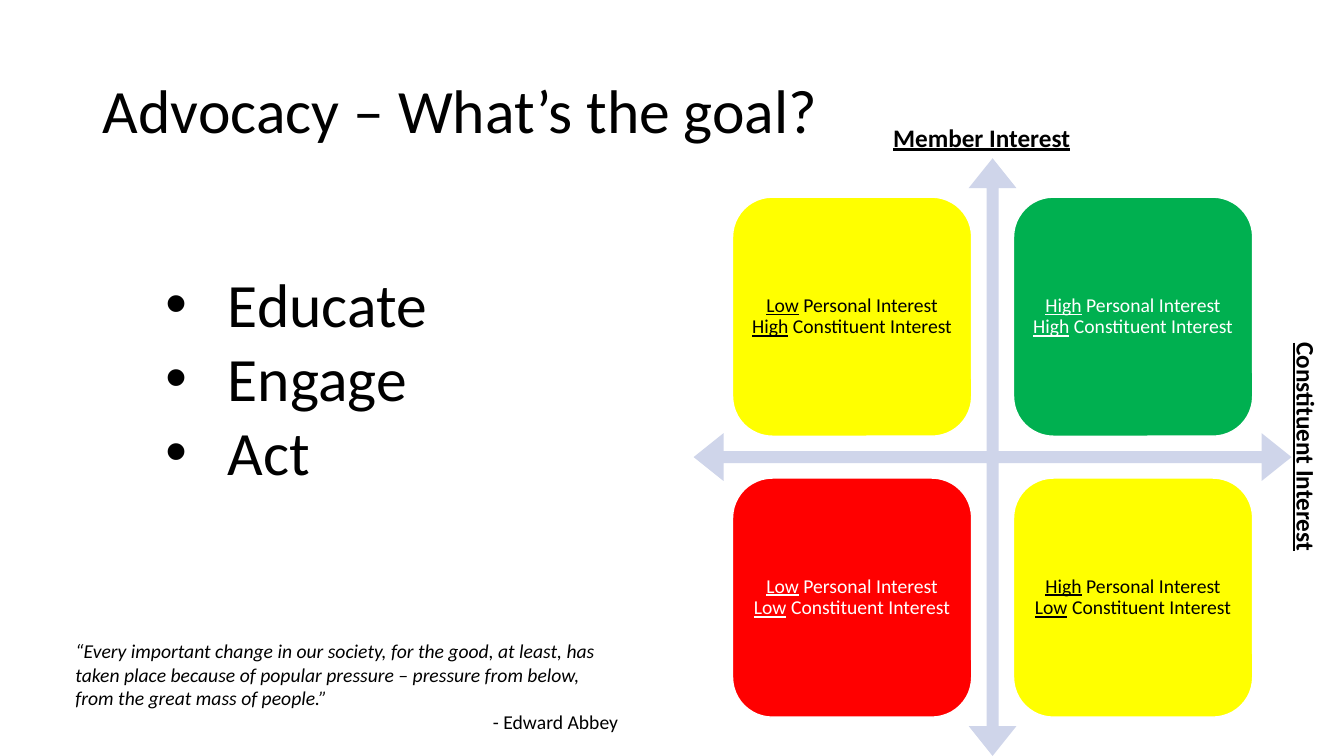
from pptx import Presentation, util as u
from pptx.dml.color import RGBColor
from pptx.enum import shapes, text

COLORS = {"black": "000000", "white": "FFFFFF", "arrow": "CFD5EA",
          "yellow": "FFFF00", "green": "00B050", "red": "FF0000"}
FONT = "Calibri"
TILES = [[("Low", "High", "yellow", "black"), ("High", "High", "green", "white")],
         [("Low", "Low", "red", "white"), ("High", "Low", "yellow", "black")]]
GOALS = ["Educate", "Engage", "Act"]
QUOTE = ("“Every important change in our society, for the good, at least, has taken place "
         "because of popular pressure – pressure from below, from the great mass of people.”")


def rgb(name):
    """Return the named palette colour."""
    return RGBColor.from_string(COLORS[name])


def place(part, box):
    """Move a part to a box given in inches."""
    part.left, part.top, part.width, part.height = map(u.Inches, box)


def add_run(paragraph, wording, size, color="black", bold=False, italic=False, underline=False):
    """Append one formatted run."""
    run = paragraph.add_run()
    run.text = wording
    font = run.font
    font.name, font.size = FONT, u.Pt(size)
    font.bold, font.italic, font.underline = bold, italic, underline
    font.color.rgb = rgb(color)


def add_shape(slide, preset, box, fill):
    """Add a flat preset shape without an outline."""
    shape = slide.shapes.add_shape(preset, *map(u.Inches, box))
    shape.shadow.inherit = False
    shape.fill.solid()
    shape.fill.fore_color.rgb = rgb(fill)
    shape.line.fill.background()
    return shape


def add_textbox(slide, box):
    """Add a wrapping text box and return it."""
    textbox = slide.shapes.add_textbox(*map(u.Inches, box))
    textbox.text_frame.word_wrap = True
    return textbox


def add_title(slide, box):
    """Fill the title placeholder."""
    title = slide.shapes.title
    place(title, box)
    frame = title.text_frame
    frame.auto_size = text.MSO_AUTO_SIZE.NONE
    frame.vertical_anchor = text.MSO_ANCHOR.MIDDLE
    heading = frame.paragraphs[0]
    heading.alignment = text.PP_ALIGN.LEFT
    heading.line_spacing = 0.9
    add_run(heading, "Advocacy – What’s the goal?", 44)


def add_goals(slide, box):
    """Fill the body placeholder with the bulleted goals."""
    body = slide.placeholders[1]
    place(body, box)
    frame = body.text_frame
    frame.auto_size = text.MSO_AUTO_SIZE.NONE
    for index, wording in enumerate(GOALS):
        goal = frame.add_paragraph() if index else frame.paragraphs[0]
        goal.space_before = u.Pt(0)
        properties = goal._p.get_or_add_pPr()
        properties.set("marL", str(u.Inches(0.62)))
        properties.set("indent", str(-u.Inches(0.62)))
        add_run(goal, wording, 44)


def add_tile(slide, box, personal, constituent, fill, color):
    """Add one quadrant with its two interest levels."""
    tile = add_shape(slide, shapes.MSO_SHAPE.ROUNDED_RECTANGLE, box, fill)
    tile.line.color.rgb = rgb("white")
    tile.line.width = u.Pt(1)
    frame = tile.text_frame
    frame.word_wrap = True
    frame.vertical_anchor = text.MSO_ANCHOR.MIDDLE
    frame.margin_left = frame.margin_right = u.Inches(0.06)
    frame.margin_top = frame.margin_bottom = u.Inches(0.06)
    levels = frame.paragraphs[0]
    levels.alignment = text.PP_ALIGN.CENTER
    levels.line_spacing = 0.9
    add_run(levels, personal, 14, color, underline=True)
    add_run(levels, " Personal Interest", 14, color)
    levels.add_line_break()
    add_run(levels, constituent, 14, color, underline=True)
    add_run(levels, " Constituent Interest", 14, color)


def add_axis_label(slide, box, wording, rotation=0):
    """Add one underlined axis label."""
    label = add_textbox(slide, box)
    label.rotation = rotation
    add_run(label.text_frame.paragraphs[0], wording, 18, bold=True, underline=True)


def add_matrix(slide, left, top, side):
    """Add the crossed arrows, four tiles and axis labels in a square."""
    arrows = add_shape(slide, shapes.MSO_SHAPE.QUAD_ARROW, (left, top, side, side), "arrow")
    for index, share in enumerate((0.02, 0.04, 0.05)):
        arrows.adjustments[index] = share
    tile, margin, pitch = 0.4 * side, 0.065 * side, 0.47 * side
    for row, tiles in enumerate(TILES):
        for column, content in enumerate(tiles):
            box = (left + margin + column * pitch, top + margin + row * pitch, tile, tile)
            add_tile(slide, box, *content)
    add_axis_label(slide, (left + 4.19, top + 3.42, 3.78, 0.4), "Constituent Interest", 90)
    add_axis_label(slide, (left + 1.88, top - 0.41, 3.78, 0.4), "Member Interest")


def add_quote(slide, box):
    """Add the quotation and its author."""
    frame = add_textbox(slide, box).text_frame
    add_run(frame.paragraphs[0], QUOTE, 14, italic=True)
    author = frame.add_paragraph()
    author.alignment = text.PP_ALIGN.RIGHT
    add_run(author, "- Edward Abbey", 14)


def main():
    """Build and save the slide."""
    deck = Presentation()
    deck.slide_width, deck.slide_height = u.Inches(13.33), u.Inches(7.5)
    slide = deck.slides.add_slide(deck.slide_layouts[1])
    add_title(slide, (0.92, 0.4, 11.5, 1.45))
    add_matrix(slide, 6.88, 1.57, 5.93)
    add_goals(slide, (1.54, 2.59, 5.2, 2.32))
    add_quote(slide, (0.65, 6.29, 5.58, 1.04))
    deck.save("out.pptx")


if __name__ == "__main__":
    main()
